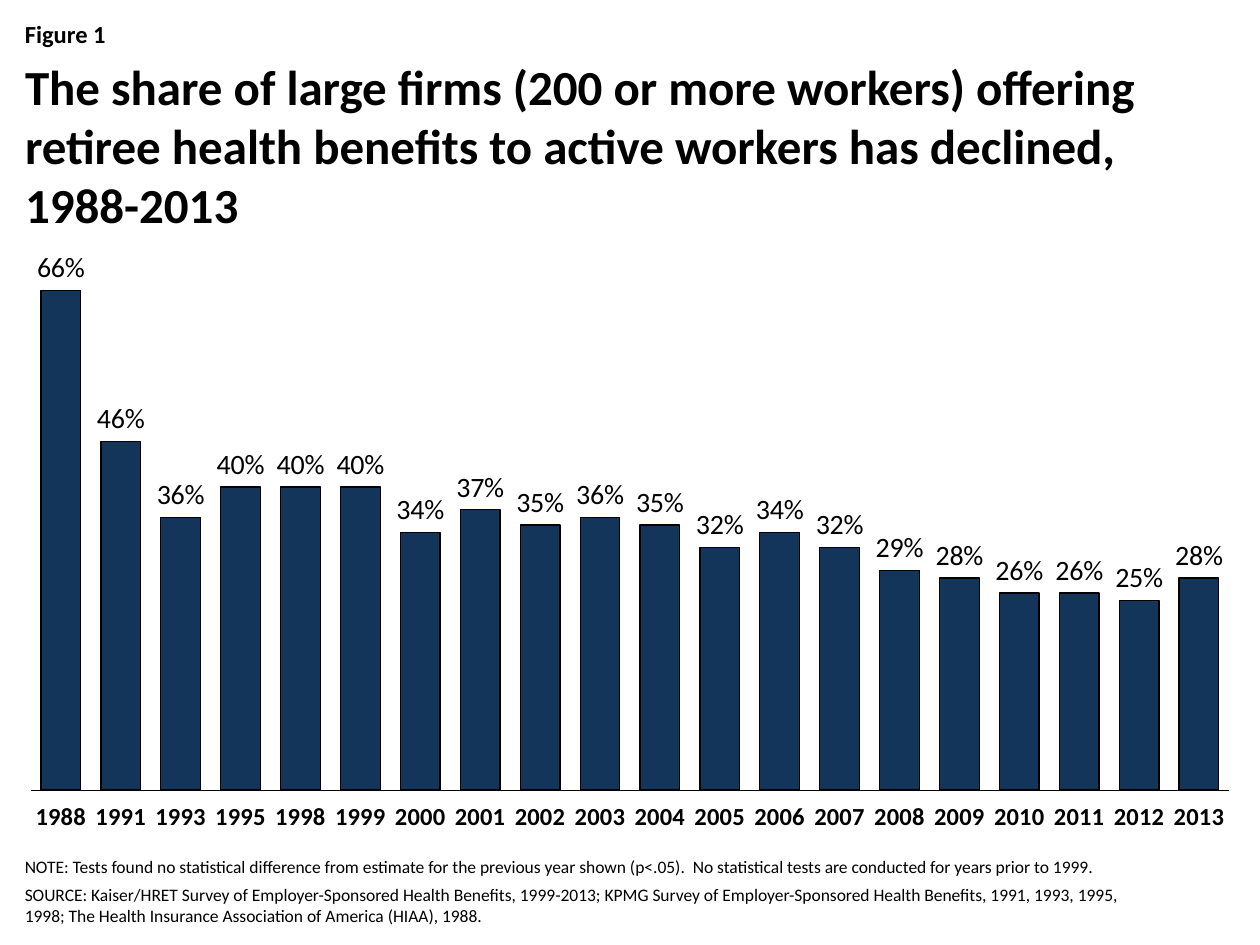
from dataclasses import dataclass

from lxml.etree import SubElement
from pptx import Presentation
from pptx.chart.data import CategoryChartData
from pptx.dml.color import RGBColor
from pptx.enum.chart import (XL_CHART_TYPE as ChartType, XL_LABEL_POSITION as LabelPosition,
                             XL_TICK_LABEL_POSITION as TickLabels, XL_TICK_MARK as TickMark)
from pptx.enum.text import MSO_ANCHOR as Anchor, MSO_AUTO_SIZE as AutoSize, PP_ALIGN as Align
from pptx.oxml.ns import qn
from pptx.util import Cm, Pt


@dataclass(frozen=True)
class Theme:
    font: str = "Calibri"
    ink: RGBColor = RGBColor(0, 0, 0)
    bar: RGBColor = RGBColor(0x13, 0x35, 0x59)
    title: float = 28
    label: float = 16
    tag: float = 14
    axis: float = 14
    note: float = 10


SHARES = {
    "1988": 0.66, "1991": 0.46, "1993": 0.36, "1995": 0.40, "1998": 0.40,
    "1999": 0.40, "2000": 0.34, "2001": 0.37, "2002": 0.35, "2003": 0.36,
    "2004": 0.35, "2005": 0.32, "2006": 0.34, "2007": 0.32, "2008": 0.29,
    "2009": 0.28, "2010": 0.26, "2011": 0.26, "2012": 0.25, "2013": 0.28,
}
TITLE = ("The share of large firms (200 or more workers) offering retiree health "
         "benefits to active workers has declined, 1988-2013")
NOTES = [
    "NOTE: Tests found no statistical difference from estimate for the previous year "
    "shown (p<.05).  No statistical tests are conducted for years prior to 1999.",
    "SOURCE: Kaiser/HRET Survey of Employer-Sponsored Health Benefits, 1999-2013; "
    "KPMG Survey of Employer-Sponsored Health Benefits, 1991, 1993, 1995, 1998; "
    "The Health Insurance Association of America (HIAA), 1988.",
]


class FigureSlide:
    def __init__(self, deck, theme):
        self.theme = theme
        self.slide = deck.slides.add_slide(deck.slide_layouts[5])

    def style(self, font, size, bold=False):
        font.name, font.size, font.bold = self.theme.font, Pt(size), bold
        font.color.rgb = self.theme.ink

    def fill_text(self, box, lines, size, bold, anchor, gap=0):
        """Write one paragraph per line, with gap points between them."""
        frame = box.text_frame
        frame.text = "\n".join(lines)
        frame.word_wrap = True
        frame.auto_size = AutoSize.NONE
        frame.vertical_anchor = anchor
        for index, para in enumerate(frame.paragraphs):
            para.alignment = Align.LEFT
            para.space_before = Pt(gap if index else 0)
            for span in para.runs:
                self.style(span.font, size, bold)

    def title(self, text, left, top, width, height):
        box = self.slide.shapes.title
        box.left, box.top, box.width, box.height = map(Cm, (left, top, width, height))
        self.fill_text(box, [text], self.theme.title, True, Anchor.TOP)

    def text(self, lines, left, top, width, height, size,
             bold=False, anchor=Anchor.TOP, gap=0):
        box = self.slide.shapes.add_textbox(*map(Cm, (left, top, width, height)))
        self.fill_text(box, lines, size, bold, anchor, gap)

    def column_chart(self, values, left, top, width, height, plot_area):
        data = CategoryChartData(number_format="0%")
        data.categories = list(values)
        data.add_series("Series 1", list(values.values()))
        chart = self.slide.shapes.add_chart(
            ChartType.COLUMN_CLUSTERED, *map(Cm, (left, top, width, height)), data).chart
        chart.has_legend = chart.has_title = False
        self.style(chart.font, self.theme.label)
        self.place_plot(chart, plot_area)

        years = chart.category_axis
        years.major_tick_mark = years.minor_tick_mark = TickMark.NONE
        years.tick_label_position = TickLabels.LOW
        years.has_major_gridlines = False
        years.format.line.color.rgb = self.theme.ink
        years.format.line.width = Pt(0.25)
        self.style(years.tick_labels.font, self.theme.axis, True)

        scale = chart.value_axis
        scale.minimum_scale, scale.maximum_scale, scale.major_unit = 0, 0.7, 0.1
        scale.has_major_gridlines = scale.visible = False

        plot = chart.plots[0]
        plot.gap_width, plot.overlap = 51, 1
        plot.vary_by_categories = False
        plot.has_data_labels = True
        labels = plot.data_labels
        labels.show_value = True
        labels.number_format, labels.number_format_is_linked = "0%", False
        labels.position = LabelPosition.OUTSIDE_END
        self.style(labels.font, self.theme.label)

        bars = plot.series[0].format
        bars.fill.solid()
        bars.fill.fore_color.rgb = self.theme.bar
        bars.line.color.rgb = self.theme.ink
        bars.line.width = Pt(0.75)

    @staticmethod
    def place_plot(chart, plot_area):
        """Fix the inner plot area, given as fractions x, y, w, h of the chart."""
        area = chart.element.find(".//" + qn("c:plotArea"))
        layout = area.find(qn("c:layout"))
        if layout is None:
            layout = SubElement(area, qn("c:layout"))
            area.insert(0, layout)
        manual = SubElement(layout, qn("c:manualLayout"))
        settings = [("layoutTarget", "inner"), ("xMode", "edge"), ("yMode", "edge")]
        for name, value in settings + list(zip("xywh", plot_area)):
            SubElement(manual, qn("c:" + name)).set("val", str(value))


def main():
    deck = Presentation()
    deck.slide_width, deck.slide_height = Cm(25.4), Cm(19.05)
    theme = Theme()
    page = FigureSlide(deck, theme)
    left, width = 0.25, 24.9
    page.text(["Figure 1"], left, 0.25, width, 0.86, theme.tag, bold=True)
    page.column_chart(SHARES, left, 4.88, width, 12.14, (0.015, 0.03, 0.97, 0.88))
    page.text(NOTES, left, 17.27, 23.11, 1.52, theme.note, anchor=Anchor.BOTTOM, gap=4)
    page.title(TITLE, left, 1.02, width, 2.54)
    deck.save("out.pptx")


if __name__ == "__main__":
    main()
